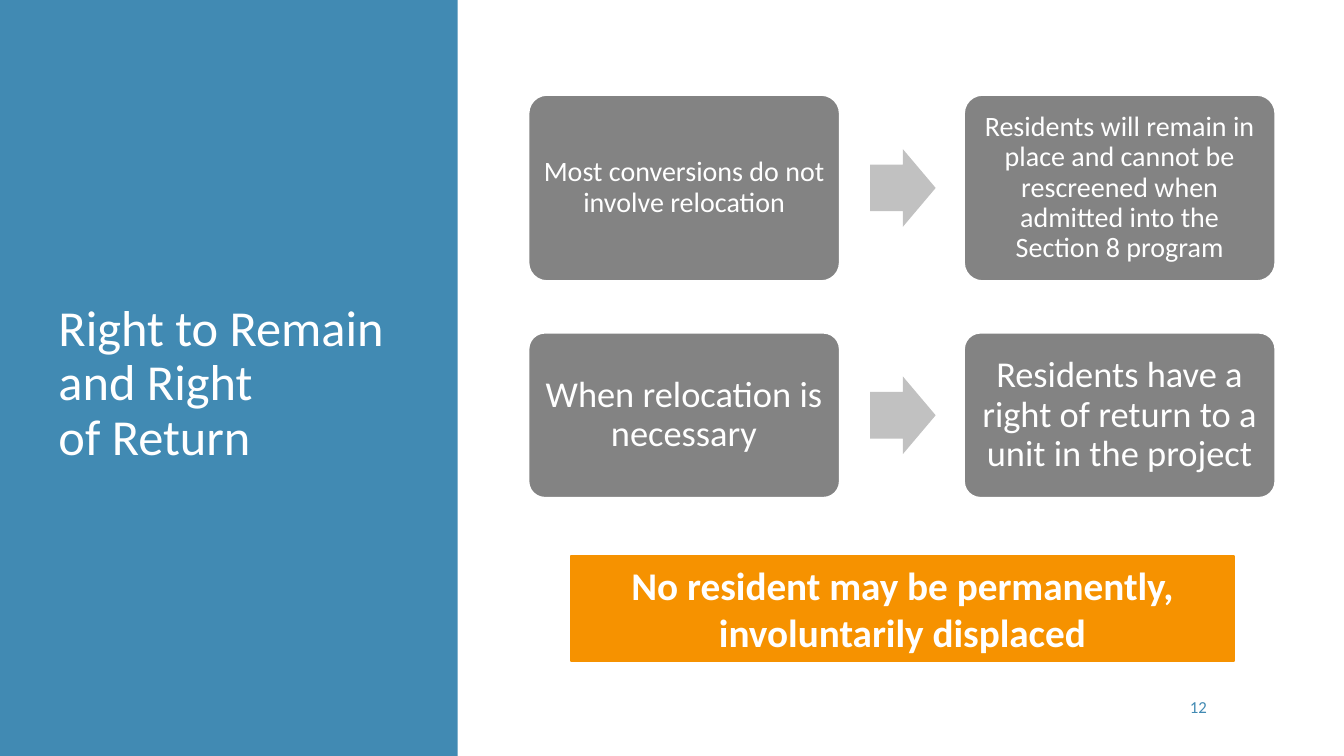
from dataclasses import dataclass

from pptx import Presentation
from pptx.dml.color import RGBColor
from pptx.enum.shapes import MSO_SHAPE
from pptx.enum.text import MSO_ANCHOR, MSO_AUTO_SIZE, PP_ALIGN
from pptx.util import Inches, Pt

RECT, ROUND, ARROW = (MSO_SHAPE.RECTANGLE, MSO_SHAPE.ROUNDED_RECTANGLE,
                      MSO_SHAPE.RIGHT_ARROW)
TOP, MIDDLE = MSO_ANCHOR.TOP, MSO_ANCHOR.MIDDLE
LEFT, CENTER, RIGHT = PP_ALIGN.LEFT, PP_ALIGN.CENTER, PP_ALIGN.RIGHT
FIXED = MSO_AUTO_SIZE.NONE


@dataclass(frozen=True)
class Theme:
    font: str = "Calibri"
    white: str = "FFFFFF"
    blue: str = "418AB3"
    orange: str = "F69200"
    dark: str = "838383"
    light: str = "C1C1C1"
    title: int = 36
    banner: int = 28
    large: int = 26
    small: int = 20
    number: int = 12


class Page:
    def __init__(self, deck, theme):
        self.theme = theme
        self.slide = deck.slides.add_slide(deck.slide_layouts[5])
        self.shapes = self.slide.shapes

    def label(self, shape, text, size, color, align=CENTER, anchor=MIDDLE,
              bold=False, spacing=None):
        frame = shape.text_frame
        frame.text = text
        frame.word_wrap = True
        frame.auto_size = FIXED
        frame.vertical_anchor = anchor
        para = frame.paragraphs[0]
        para.alignment = align
        para.line_spacing = spacing
        font = para.font
        font.name, font.size, font.bold = self.theme.font, Pt(size), bold
        font.color.rgb = RGBColor.from_string(color)
        return frame

    def shape(self, kind, area, fill, line=None):
        shape = self.shapes.add_shape(kind, *map(Inches, area))
        shape.shadow.inherit = False
        shape.fill.solid()
        shape.fill.fore_color.rgb = RGBColor.from_string(fill)
        if line:
            shape.line.color.rgb = RGBColor.from_string(line)
            shape.line.width = Pt(1.5)
        else:
            shape.line.fill.background()
        return shape

    def title(self, text, area):
        title = self.shapes.title
        title.left, title.top, title.width, title.height = map(Inches, area)
        self.label(title, text, self.theme.title, self.theme.white, LEFT,
                   spacing=0.9)
        # Bring the title in front of the side panel
        self.shapes._spTree.append(title._element)

    def number(self, text, area):
        box = self.shapes.add_textbox(*map(Inches, area))
        self.label(box, text, self.theme.number, self.theme.blue, RIGHT)

    def banner(self, text, area):
        color = self.theme.orange
        box = self.shape(RECT, area, color, color)
        self.label(box, text, self.theme.banner, self.theme.white,
                   anchor=TOP, bold=True)

    def card(self, text, area, size, inset):
        box = self.shape(ROUND, area, self.theme.dark, self.theme.white)
        box.adjustments[0] = 0.1
        frame = self.label(box, text, size, self.theme.white, spacing=0.9)
        frame.margin_left = frame.margin_right = Inches(inset)
        frame.margin_top = frame.margin_bottom = Inches(inset)

    def arrow(self, area):
        arrow = self.shape(ARROW, area, self.theme.light)
        arrow.adjustments[0] = 0.6
        arrow.adjustments[1] = 0.5

    def flow(self, cause, result, top, height, size, inset):
        wide, tall = 3.09, 0.77
        self.card(cause, (5.24, top, wide, height), size, inset)
        self.arrow((8.63, top + (height - tall) / 2, 0.65, tall))
        self.card(result, (9.56, top, wide, height), size, inset)


def main():
    deck = Presentation()
    deck.slide_width, deck.slide_height = Inches(13.33), Inches(7.5)
    theme = Theme()
    page = Page(deck, theme)

    # Side panel with title
    page.shape(RECT, (0, 0, 4.54, 7.5), theme.blue)
    page.title("Right to Remain and Right \vof Return",
               (0.48, 0.96, 3.58, 5.71))

    # Page number and key message
    page.number("12", (10.9, 6.81, 1.17, 0.4))
    page.banner("No resident may be permanently, involuntarily displaced",
                (5.66, 5.52, 6.58, 1.04))

    # Cause and result rows
    page.flow("Most conversions do not involve relocation",
              "Residents will remain in place and cannot be rescreened when "
              "admitted into the Section 8 program",
              0.94, 1.85, theme.small, 0.08)
    page.flow("When relocation is necessary",
              "Residents have a right of return to a unit in the project",
              3.3, 1.64, theme.large, 0.11)

    deck.save("out.pptx")


if __name__ == "__main__":
    main()
